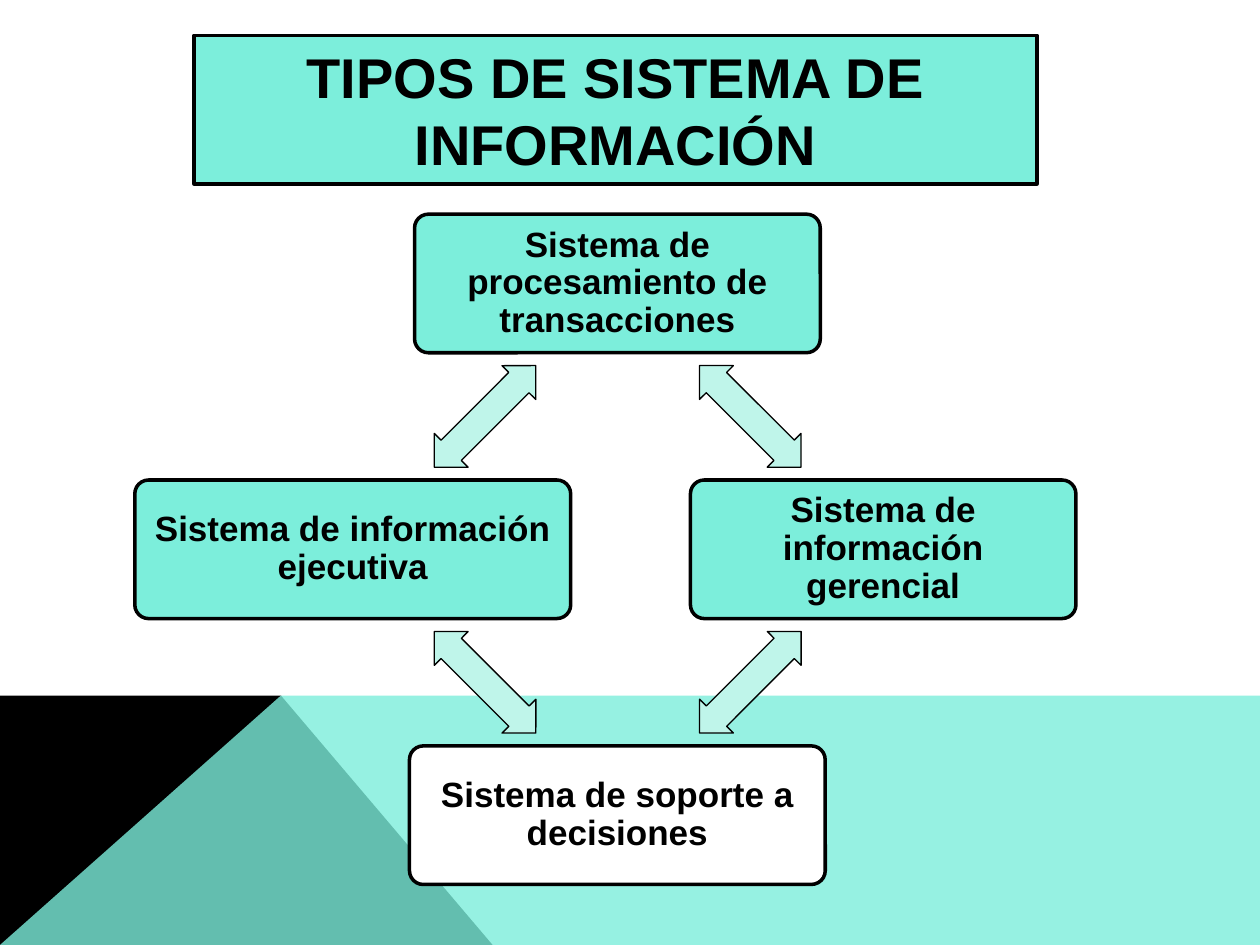
"""Build a slide showing the cycle of information system types."""
import dataclasses

import lxml.etree
import pptx
import pptx.dml.color
import pptx.enum.shapes
import pptx.enum.text
import pptx.oxml.ns
import pptx.util

Inches = pptx.util.Inches
Pt = pptx.util.Pt
MSO_SHAPE = pptx.enum.shapes.MSO_SHAPE


@dataclasses.dataclass(frozen=True)
class Theme:
    font: str = "Arial"
    ink: str = "000000"
    paper: str = "FFFFFF"
    aqua: str = "7CEEDB"
    pale: str = "BFF5EA"
    title_size: float = 32
    box_size: float = 20
    outline: float = 2
    arrow_outline: float = 0.75


@dataclasses.dataclass(frozen=True)
class Box:
    text: str
    center_x: float
    top: float
    width: float
    fill: str


@dataclasses.dataclass(frozen=True)
class Arrow:
    center_x: float
    center_y: float
    rotation: float


THEME = Theme()
BOX_HEIGHT = 1.1
ROW_STEP = 2.11
TOP = 1.7
MIDDLE, BOTTOM = TOP + ROW_STEP, TOP + 2 * ROW_STEP
CENTER, LEFT, RIGHT = 4.9, 2.8, 7.01
ARROW_WIDTH, ARROW_HEIGHT = 1.14, 0.38
ARROW_LEFT, ARROW_RIGHT = (LEFT + CENTER) / 2, (CENTER + RIGHT) / 2
ARROW_UPPER = (TOP + MIDDLE + BOX_HEIGHT) / 2
ARROW_LOWER = ARROW_UPPER + ROW_STEP

BOXES = [
    Box("Sistema de procesamiento de transacciones", CENTER, TOP, 3.22, THEME.aqua),
    Box("Sistema de información gerencial", RIGHT, MIDDLE, 3.06, THEME.aqua),
    Box("Sistema de soporte a decisiones", CENTER, BOTTOM, 3.3, THEME.paper),
    Box("Sistema de información ejecutiva", LEFT, MIDDLE, 3.46, THEME.aqua),
]
ARROWS = [
    Arrow(ARROW_RIGHT, ARROW_UPPER, 45),
    Arrow(ARROW_RIGHT, ARROW_LOWER, 135),
    Arrow(ARROW_LEFT, ARROW_LOWER, 225),
    Arrow(ARROW_LEFT, ARROW_UPPER, 315),
]


def rgb(color: str) -> pptx.dml.color.RGBColor:
    return pptx.dml.color.RGBColor.from_string(color)


def paint(sp, fill: str, line_width: float = 0) -> None:
    sp.shadow.inherit = False
    sp.fill.solid()
    sp.fill.fore_color.rgb = rgb(fill)
    if line_width:
        sp.line.color.rgb = rgb(THEME.ink)
        sp.line.width = Pt(line_width)
    else:
        sp.line.fill.background()


def write(sp, text: str, size: float):
    tf = sp.text_frame
    tf.word_wrap = True
    tf.vertical_anchor = pptx.enum.text.MSO_ANCHOR.MIDDLE
    p = tf.paragraphs[0]
    p.alignment = pptx.enum.text.PP_ALIGN.CENTER
    r = p.add_run()
    r.text = text
    r.font.name = THEME.font
    r.font.size = Pt(size)
    r.font.bold = True
    r.font.color.rgb = rgb(THEME.ink)
    return p


def add_panel(s, points: list[tuple[float, float]], fill: str, opacity: int = 100) -> None:
    corners = [(Inches(x), Inches(y)) for x, y in points]
    builder = s.shapes.build_freeform(*corners[0])
    builder.add_line_segments(corners[1:], close=True)
    sp = builder.convert_to_shape()
    paint(sp, fill)
    if opacity < 100:
        qn = pptx.oxml.ns.qn
        color = sp.fill._xPr.find(qn("a:solidFill")).find(qn("a:srgbClr"))
        lxml.etree.SubElement(color, qn("a:alpha")).set("val", str(opacity * 1000))


def add_title(s, text: str) -> None:
    sp = s.shapes.add_shape(
        MSO_SHAPE.RECTANGLE, Inches(1.54), Inches(0.28), Inches(6.69), Inches(1.18)
    )
    paint(sp, THEME.aqua, THEME.outline)
    write(sp, text, THEME.title_size)


def add_box(s, box: Box) -> None:
    sp = s.shapes.add_shape(
        MSO_SHAPE.ROUNDED_RECTANGLE,
        Inches(box.center_x - box.width / 2),
        Inches(box.top),
        Inches(box.width),
        Inches(BOX_HEIGHT),
    )
    sp.adjustments[0] = 0.1
    paint(sp, box.fill, THEME.outline)
    tf = sp.text_frame
    tf.margin_left = tf.margin_right = tf.margin_top = tf.margin_bottom = Inches(0.08)
    write(sp, box.text, THEME.box_size).line_spacing = 0.9


def add_arrow(s, arrow: Arrow) -> None:
    sp = s.shapes.add_shape(
        MSO_SHAPE.LEFT_RIGHT_ARROW,
        Inches(arrow.center_x - ARROW_WIDTH / 2),
        Inches(arrow.center_y - ARROW_HEIGHT / 2),
        Inches(ARROW_WIDTH),
        Inches(ARROW_HEIGHT),
    )
    sp.adjustments[0] = 0.6
    sp.adjustments[1] = 0.5
    sp.rotation = arrow.rotation
    paint(sp, THEME.pale, THEME.arrow_outline)


def main() -> None:
    prs = pptx.Presentation()
    prs.slide_width, prs.slide_height = Inches(10), Inches(7.5)
    s = prs.slides.add_slide(prs.slide_layouts[6])
    s.background.fill.solid()
    s.background.fill.fore_color.rgb = rgb(THEME.paper)
    add_panel(s, [(0, 7.5), (0, 5.52), (2.23, 5.52), (3.91, 7.5)], THEME.ink)
    add_panel(s, [(0, 7.5), (2.23, 5.52), (10, 5.52), (10, 7.5)], THEME.aqua, 80)
    add_title(s, "TIPOS DE SISTEMA DE INFORMACIÓN")
    for box in BOXES:
        add_box(s, box)
    for arrow in ARROWS:
        add_arrow(s, arrow)
    prs.save("out.pptx")


if __name__ == "__main__":
    main()
